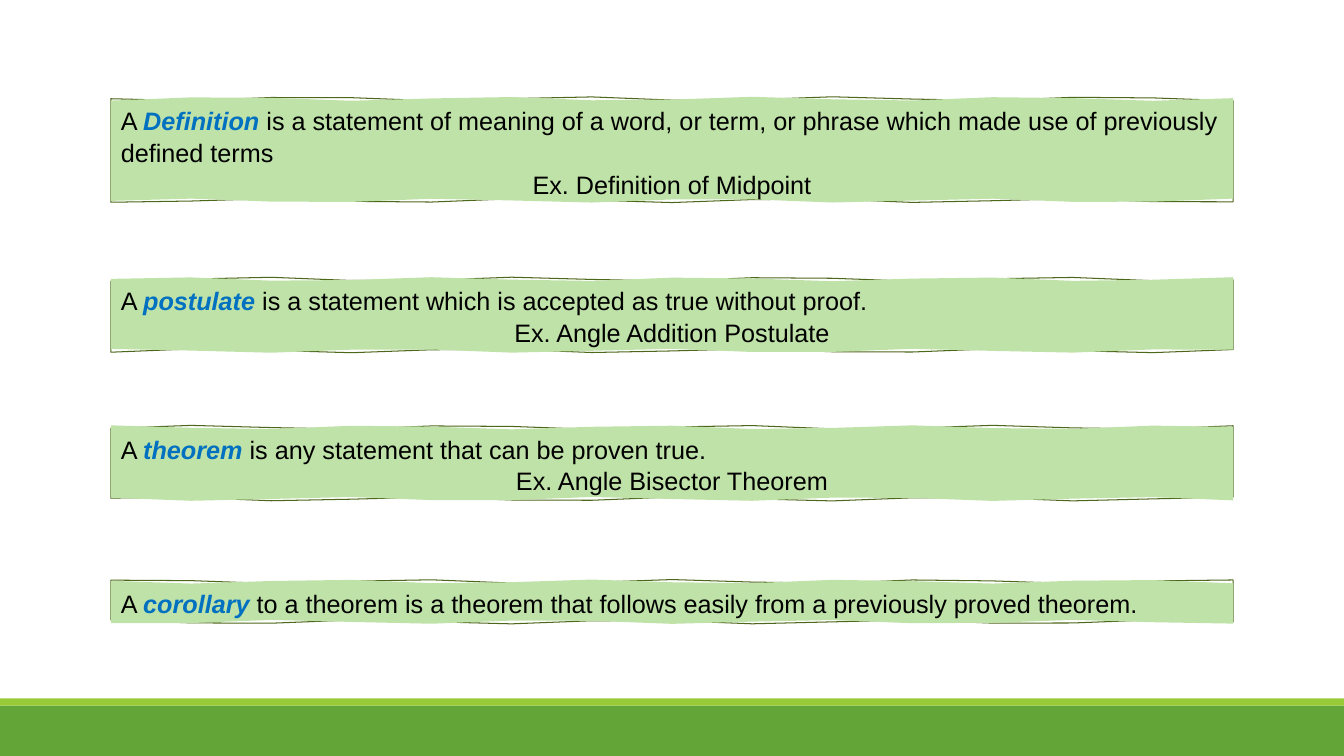
from math import sin
from pptx import Presentation, util as u
from pptx.dml.color import RGBColor
from pptx.enum import shapes, text

TERMS = [
    (0.98, 1.01, "Definition",
     " is a statement of meaning of a word, or term, or phrase which made use of previously defined terms",
     "Ex. Definition of Midpoint"),
    (2.77, 0.71, "postulate", " is a statement which is accepted as true without proof.",
     "Ex. Angle Addition Postulate"),
    (4.24, 0.71, "theorem", " is any statement that can be proven true.",
     "Ex. Angle Bisector Theorem"),
    (5.77, 0.4, "corollary",
     " to a theorem is a theorem that follows easily from a previously proved theorem.", None),
]
BARS = [(7, 0.5, "63A537"), (6.93, 0.07, "99CB38")]
THEME = dict(font="Arial", size=18, ink="000000", accent="0070C0",
             panel="BFE2A8", edge="4D671B", edge_width=0.75)
WIDTH, HEIGHT = 13.33, 7.5
LEFT, PANEL_WIDTH = 1.1, 11.13
STEPS, WOBBLE = 14, 0.02


def add_text(p, content, color=THEME["ink"], strong=False):
    r = p.add_run()
    r.text = content
    f = r.font
    f.name, f.size = THEME["font"], u.Pt(THEME["size"])
    f.bold = f.italic = strong
    f.color.rgb = RGBColor.from_string(color)


def wavy_outline(s, top, height, phase):
    def edge(y, shift):
        return [(LEFT + PANEL_WIDTH * i / STEPS, y + WOBBLE * sin(i * 1.9 + shift))
                for i in range(STEPS + 1)]

    points = edge(top, phase) + edge(top + height, phase + 1)[::-1]
    points = [(u.Inches(x), u.Inches(y)) for x, y in points]
    fb = s.shapes.build_freeform(*points[0])
    fb.add_line_segments(points[1:], close=True)
    return fb.convert_to_shape()


def add_panel(s, top, height, phase):
    sketch = wavy_outline(s, top, height, phase)
    sp = wavy_outline(s, top, height, phase + 2)
    stroke = sketch._element.xpath(".//a:path")[0]
    body = sp._element.xpath(".//a:path")[0]
    stroke.set("fill", "none")
    body.set("stroke", "0")
    body.addprevious(stroke)
    s.shapes._spTree.remove(sketch._element)
    sp.shadow.inherit = False
    sp.fill.solid()
    sp.fill.fore_color.rgb = RGBColor.from_string(THEME["panel"])
    sp.line.color.rgb = RGBColor.from_string(THEME["edge"])
    sp.line.width = u.Pt(THEME["edge_width"])
    return sp


def main():
    prs = Presentation()
    prs.slide_width, prs.slide_height = u.Inches(WIDTH), u.Inches(HEIGHT)
    s = prs.slides.add_slide(prs.slide_layouts[6])

    for top, height, color in BARS:
        bar = s.shapes.add_shape(shapes.MSO_SHAPE.RECTANGLE, 0, u.Inches(top),
                                 prs.slide_width, u.Inches(height))
        bar.shadow.inherit = False
        bar.fill.solid()
        bar.fill.fore_color.rgb = RGBColor.from_string(color)
        bar.line.fill.background()

    for n, (top, height, term, meaning, example) in enumerate(TERMS):
        tf = add_panel(s, top, height, n * 1.3).text_frame
        tf.word_wrap = True
        tf.vertical_anchor = text.MSO_ANCHOR.TOP
        tf.margin_left = tf.margin_right = u.Inches(0.1)
        tf.margin_top, tf.margin_bottom = u.Inches(0.07), u.Inches(0.03)
        p = tf.paragraphs[0]
        p.alignment = text.PP_ALIGN.LEFT
        add_text(p, "A ")
        add_text(p, term, color=THEME["accent"], strong=True)
        add_text(p, meaning)
        if example:
            p = tf.add_paragraph()
            p.alignment = text.PP_ALIGN.CENTER
            add_text(p, example)
        for p in tf.paragraphs:
            p.line_spacing = 1.05

    prs.save("out.pptx")


if __name__ == "__main__":
    main()
